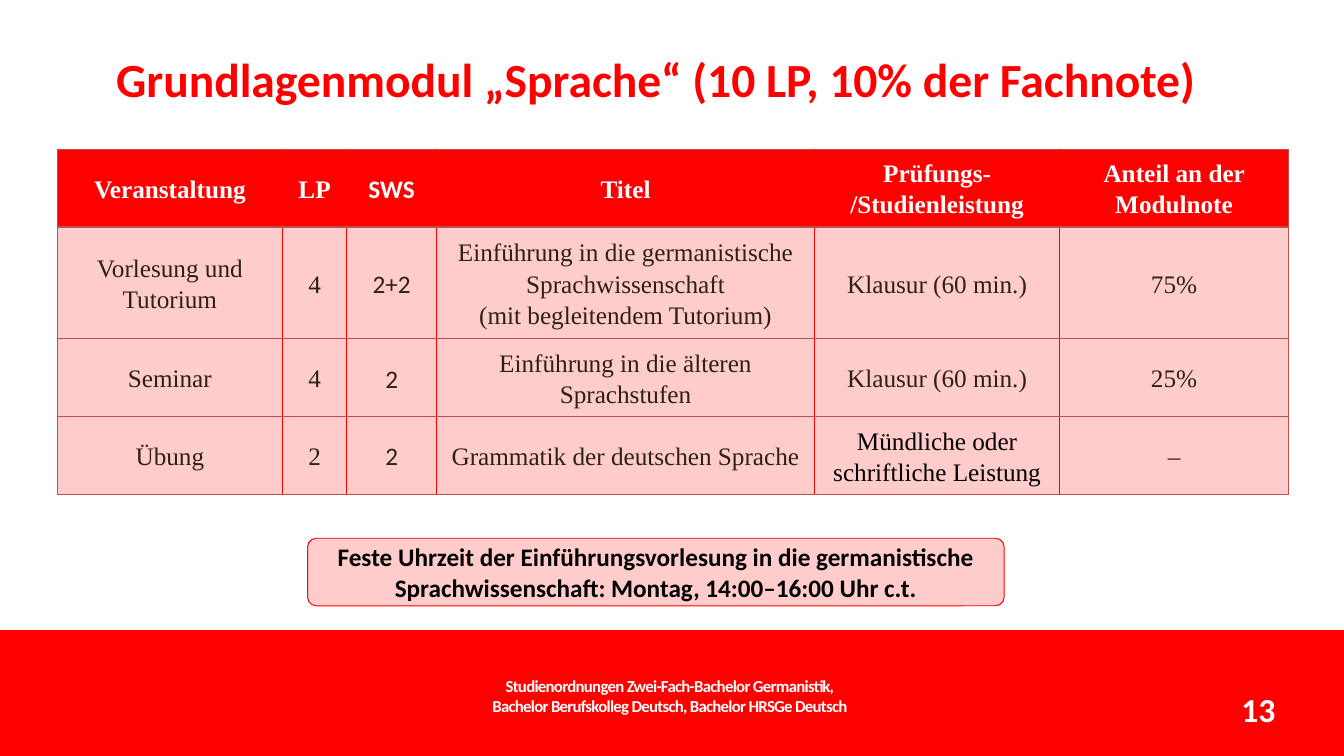
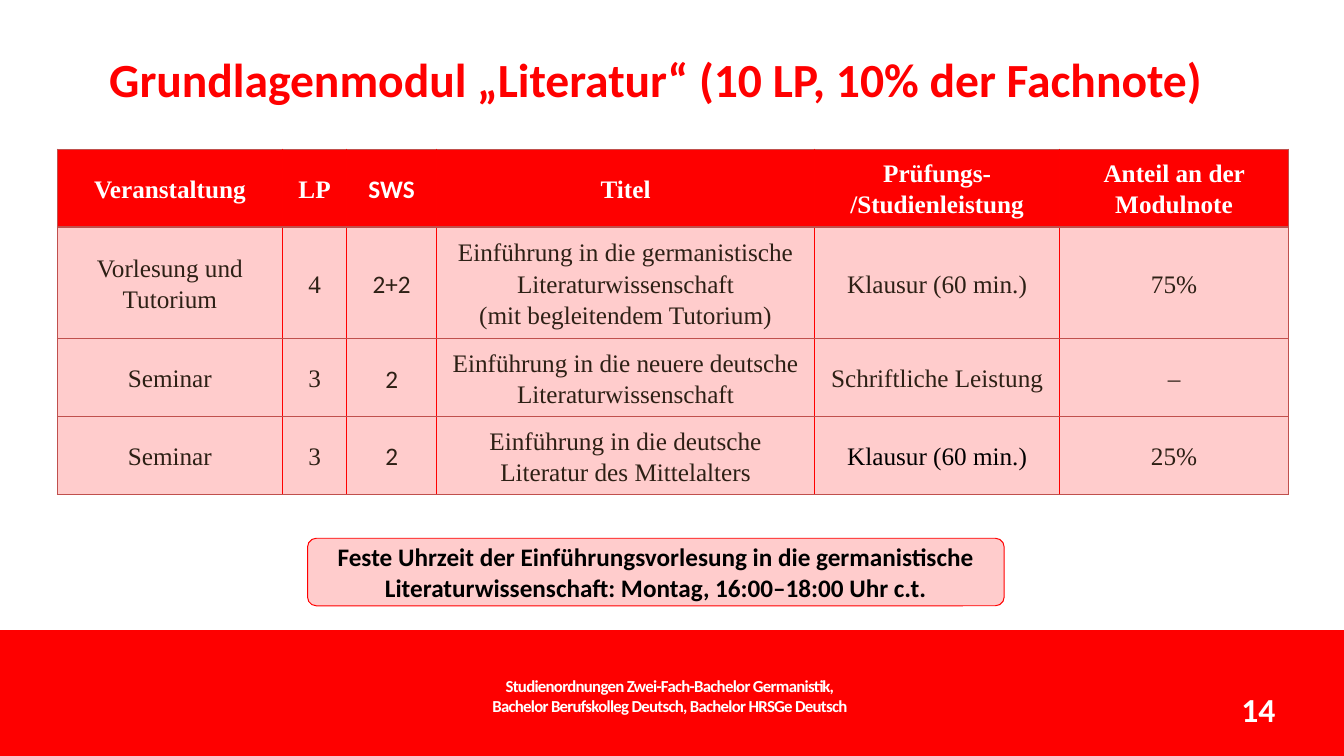
from dataclasses import dataclass

from lxml import etree
from pptx import Presentation
from pptx.dml.color import RGBColor
from pptx.enum.shapes import MSO_SHAPE
from pptx.enum.text import MSO_ANCHOR, PP_ALIGN
from pptx.oxml.ns import qn
from pptx.util import Inches, Pt

CENTER, RIGHT = PP_ALIGN.CENTER, PP_ALIGN.RIGHT
TOP, MIDDLE = MSO_ANCHOR.TOP, MSO_ANCHOR.MIDDLE
RECT, ROUND = MSO_SHAPE.RECTANGLE, MSO_SHAPE.ROUNDED_RECTANGLE
TITLE_ONLY = 5


@dataclass(frozen=True)
class Theme:
    red: str = "FF0000"
    band: str = "FE0000"
    rose: str = "FFCCCC"
    edge: str = "C0504D"
    brown: str = "2D2015"
    black: str = "000000"
    white: str = "FFFFFF"
    sans: str = "Calibri"
    serif: str = "Times New Roman"
    head: int = 34
    page: int = 24
    body: int = 18
    foot: int = 12


THEME = Theme()
FOOTER = ("Studienordnungen Zwei-Fach-Bachelor Germanistik,\n"
          "Bachelor Berufskolleg Deutsch, Bachelor HRSGe Deutsch")
COLS = [2.23, 0.64, 0.89, 3.75, 2.43, 2.27]
ROWS = [0.66, 0.94, 0.66, 0.66]
SWS_COL, EXAM_COL = 2, 4
HEADER = ["Veranstaltung", "LP", "SWS", "Titel",
          "Prüfungs- /Studienleistung", "Anteil an der Modulnote"]
EXAM = "Klausur (60 min.)"


def lecture(field):
    return ["Vorlesung und Tutorium", "4", "2+2",
            f"Einführung in die germanistische {field}\n"
            "(mit begleitendem Tutorium)", EXAM, "75%"]


MODULES = [
    ("Sprache", "Sprachwissenschaft", "14:00–16:00", [
        ["Seminar", "4", "2", "Einführung in die älteren Sprachstufen",
         EXAM, "25%"],
        ["Übung", "2", "2", "Grammatik der deutschen Sprache",
         "Mündliche oder schriftliche Leistung", "–"],
    ]),
    ("Literatur", "Literaturwissenschaft", "16:00–18:00", [
        ["Seminar", "3", "2",
         "Einführung in die neuere deutsche Literaturwissenschaft",
         "Schriftliche Leistung", "–"],
        ["Seminar", "3", "2",
         "Einführung in die deutsche Literatur des Mittelalters",
         EXAM, "25%"],
    ]),
]


def rgb(color):
    return RGBColor.from_string(color)


def border(cell, **sides):
    props = cell._tc.get_or_add_tcPr()
    for side in "LRTB":
        line = etree.SubElement(props, qn(f"a:ln{side}"), w=str(Pt(1)))
        fill = etree.SubElement(line, qn("a:solidFill"))
        etree.SubElement(fill, qn("a:srgbClr"), val=sides[side])


class Deck:
    def __init__(self, theme):
        self.theme = theme
        self.prs = Presentation()
        self.prs.slide_width = Inches(13.33)
        self.prs.slide_height = Inches(7.5)
        self.layout = self.prs.slide_layouts[TITLE_ONLY]
        self.slide = None

    def start(self, title, number):
        first = self.slide is None
        self.slide = self.prs.slides.add_slide(self.layout)
        if first:
            self.band()
        self.title(title)
        self.label(FOOTER, (4.66, 6.71, 3.97, 0.39), self.theme.foot,
                   CENTER, lead=Pt(14.2), track=-50)
        self.label(str(number), (9.58, 6.83, 3.07, 0.4), self.theme.page, RIGHT)

    def place(self, shape, box):
        shape.left, shape.top, shape.width, shape.height = map(Inches, box)

    def text(self, frame, text, size, color, font=None, bold=True,
             align=CENTER, track=None):
        para = frame.paragraphs[0]
        para.alignment = align
        for i, line in enumerate(text.split("\n")):
            if i:
                para.add_line_break()
            run = para.add_run()
            run.text = line
            run.font.name = font or self.theme.sans
            run.font.size = Pt(size)
            run.font.bold = bold
            run.font.color.rgb = rgb(color)
            if track is not None:
                run._r.get_or_add_rPr().set("spc", str(track))
        return para

    def bare(self, frame, anchor=TOP):
        """Wrap the text and drop all insets."""
        frame.word_wrap = True
        frame.vertical_anchor = anchor
        frame.margin_left = frame.margin_right = 0
        frame.margin_top = frame.margin_bottom = 0

    def shape(self, kind, box, fill, line=None):
        item = self.slide.shapes.add_shape(kind, *map(Inches, box))
        item.shadow.inherit = False
        item.fill.solid()
        item.fill.fore_color.rgb = rgb(fill)
        if line:
            item.line.color.rgb = rgb(line)
            item.line.width = Pt(0.72)
        else:
            item.line.fill.background()
        return item

    def band(self):
        """Put the red foot band on the shared layout, behind the rest."""
        band = self.shape(RECT, (0, 6.25, 13.33, 1.25), self.theme.band)
        band.element.nvSpPr.cNvPr.set("id", "20")
        self.layout.shapes.element.insert(2, band.element)

    def title(self, text):
        title = self.slide.shapes.title
        self.place(title, (1, 0.5, 11.01, 0.57))
        self.bare(title.text_frame)
        self.text(title.text_frame, text, self.theme.head, self.theme.red)

    def label(self, text, box, size, align, lead=None, track=None):
        frame = self.slide.shapes.add_textbox(*map(Inches, box)).text_frame
        self.bare(frame)
        para = self.text(frame, text, size, self.theme.white,
                         align=align, track=track)
        if lead:
            para.line_spacing = lead

    def table(self, rows):
        box = (0.57, 1.48, sum(COLS), sum(ROWS))
        table = self.slide.shapes.add_table(
            len(ROWS), len(COLS), *map(Inches, box)).table
        table.horz_banding = False
        for col, width in zip(table.columns, COLS):
            col.width = Inches(width)
        for row, height in zip(table.rows, ROWS):
            row.height = Inches(height)
        for r, row in enumerate(rows):
            for c, text in enumerate(row):
                self.cell(table.cell(r, c), r, c, text)

    def cell(self, cell, r, c, text):
        theme = self.theme
        head = r == 0
        last = len(COLS) - 1
        border(cell, L=theme.red if c else theme.edge,
               R=theme.red if c < last else theme.edge,
               T=theme.edge, B=theme.edge)
        cell.fill.solid()
        cell.fill.fore_color.rgb = rgb(theme.band if head else theme.rose)
        cell.vertical_anchor = MIDDLE
        cell.margin_left = cell.margin_right = Inches(0.13)
        cell.margin_top = cell.margin_bottom = Inches(0.05)
        if head:
            color = theme.white
        elif (r, c) == (len(ROWS) - 1, EXAM_COL):
            color = theme.black
        else:
            color = theme.brown
        font = theme.sans if c == SWS_COL else theme.serif
        para = self.text(cell.text_frame, text, theme.body, color, font, head)
        para.line_spacing = 1.12
        para.space_after = Pt(14.2)

    def note(self, text):
        note = self.shape(ROUND, (3.05, 5.34, 6.91, 0.67),
                          self.theme.rose, self.theme.red)
        note.adjustments[0] = 0.13
        self.bare(note.text_frame, MIDDLE)
        self.text(note.text_frame, text, self.theme.body, self.theme.black)


def main():
    deck = Deck(THEME)
    for number, (name, field, time, rows) in enumerate(MODULES, 13):
        deck.start(f"Grundlagenmodul „{name}“ (10 LP, 10% der Fachnote)", number)
        deck.table([HEADER, lecture(field), *rows])
        deck.note("Feste Uhrzeit der Einführungsvorlesung in die "
                  f"germanistische {field}: Montag, {time} Uhr c.t.")
    deck.prs.save("out.pptx")


if __name__ == "__main__":
    main()
